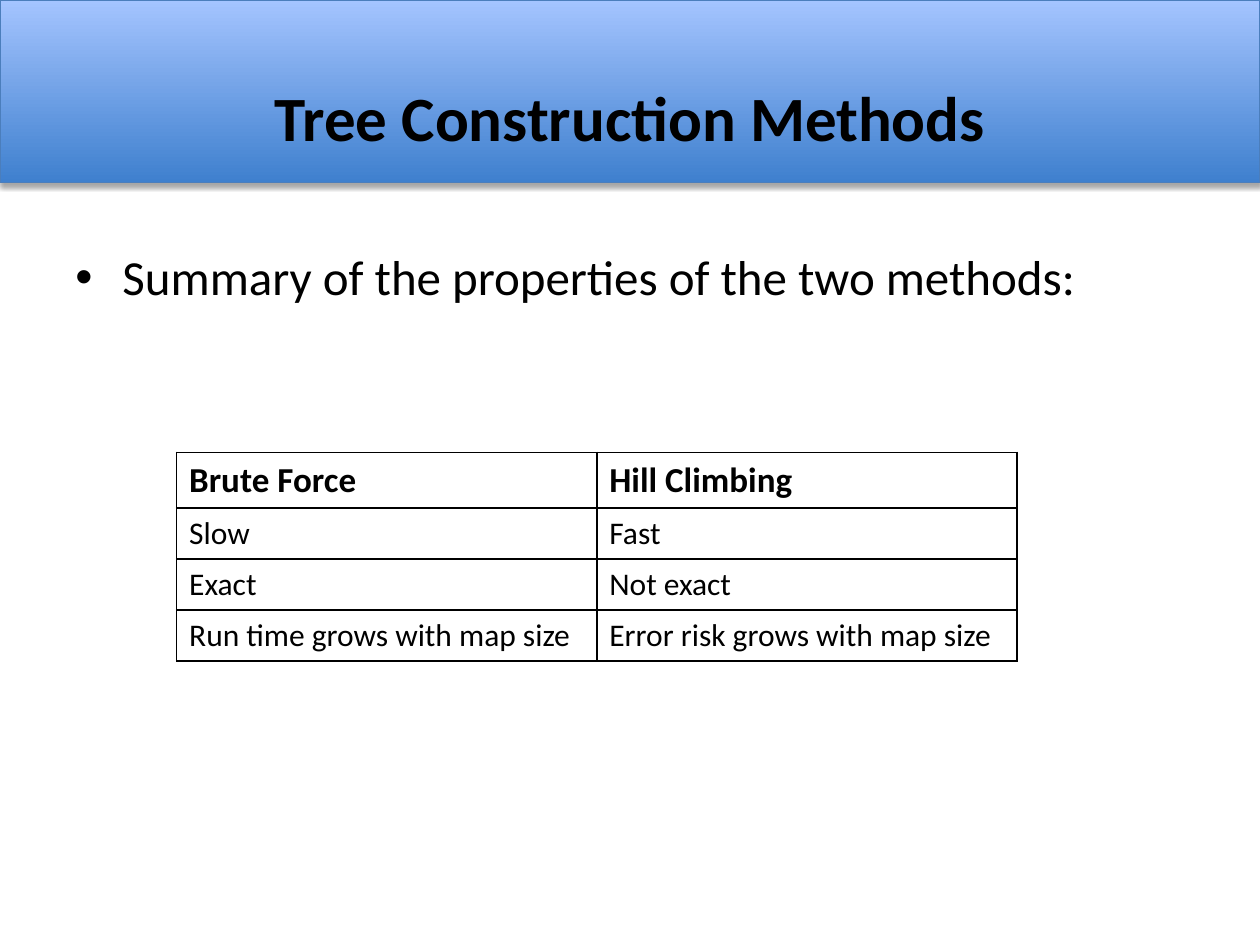
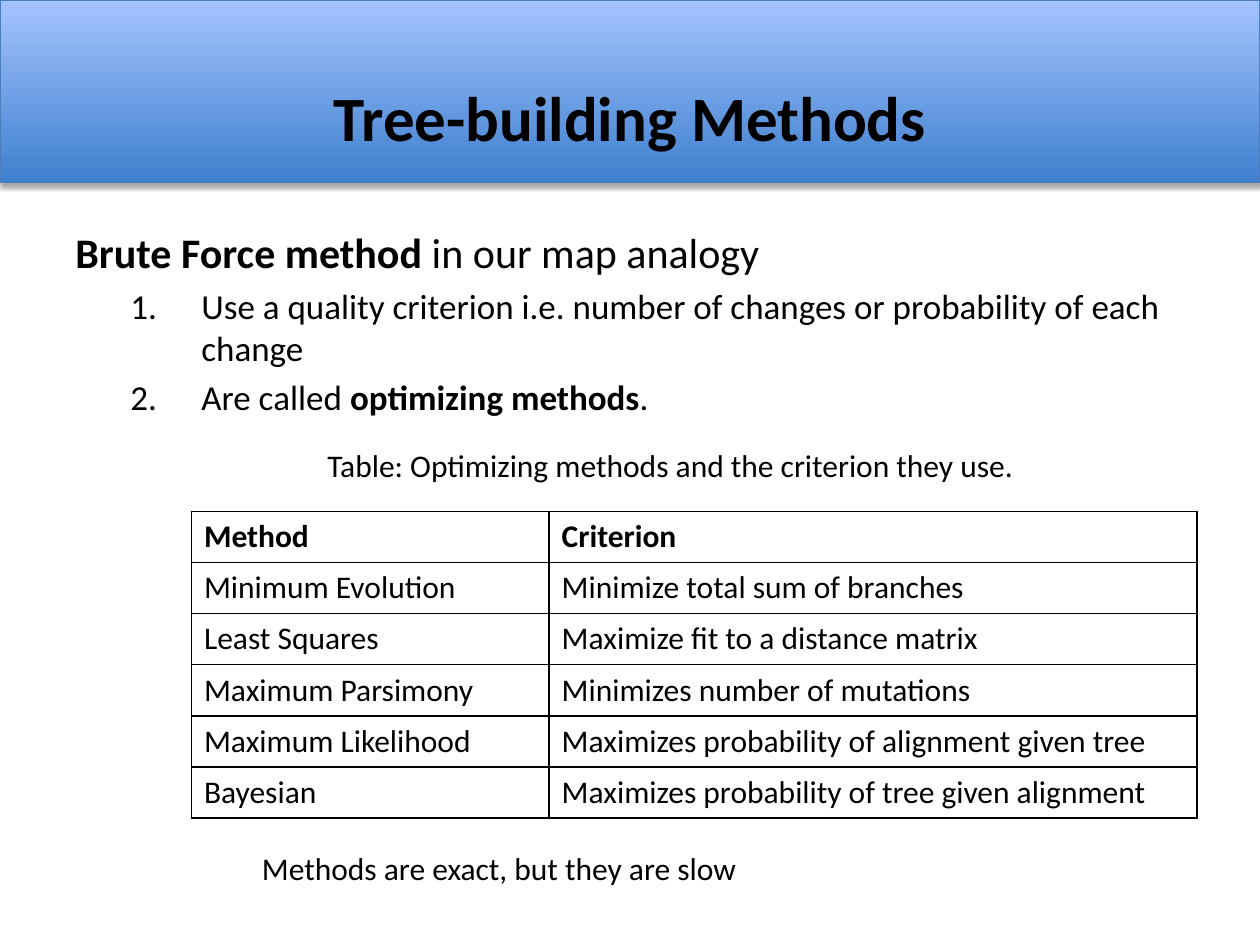
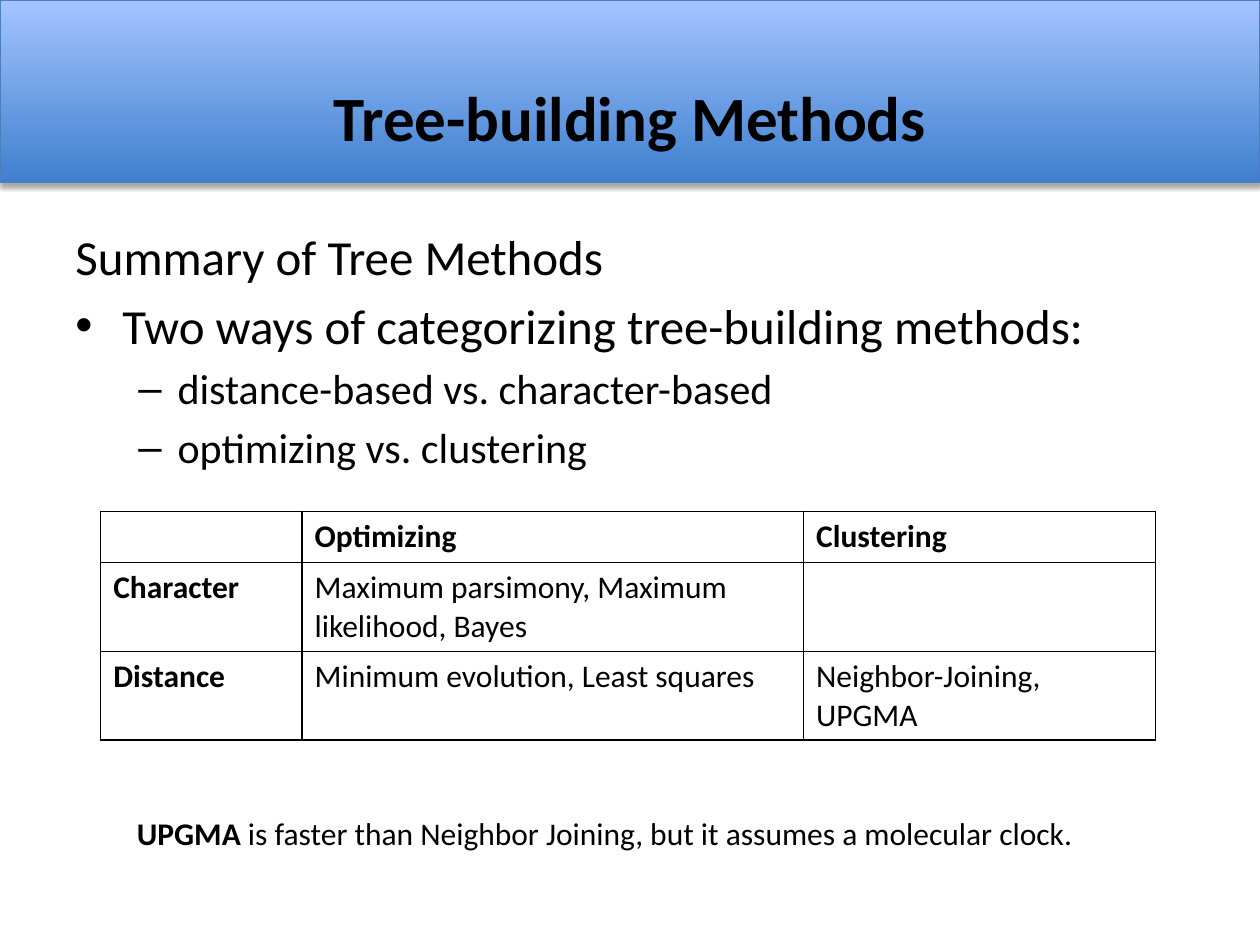
from lxml import etree
from pptx import Presentation
from pptx.dml.color import RGBColor
from pptx.enum.shapes import MSO_SHAPE
from pptx.enum.text import MSO_ANCHOR, MSO_AUTO_SIZE, PP_ALIGN
from pptx.oxml.ns import qn
from pptx.util import Cm, Pt

RECTANGLE = MSO_SHAPE.RECTANGLE
TOP, MIDDLE = MSO_ANCHOR.TOP, MSO_ANCHOR.MIDDLE
CENTER = PP_ALIGN.CENTER
GROW, FIXED = MSO_AUTO_SIZE.SHAPE_TO_FIT_TEXT, MSO_AUTO_SIZE.NONE

FONT = "Calibri"
BLACK = "000000"
BAND_BOTTOM, BAND_TOP, BAND_LINE = "3F80CE", "A4C4FF", "4B7EBC"

SLIDE_WIDTH, SLIDE_HEIGHT = 25.4, 19.05
BAND_HEIGHT = 3.68
TITLE_BOX = (1.27, 0.76, 22.86, 3.18)
ROW_HEIGHT, TWO_LINE_ROW = 1.03, 1.79

# Paragraph formats of the body text: left margin and hanging indent in cm
BULLET = {"bullet": "•", "margin": 0.95, "hanging": 0.95}
DASH = {"bullet": "–", "margin": 2.06, "hanging": 0.79, "level": 1}
NUMBER = {"bullet": "1.", "margin": 2.54, "hanging": 1.43, "level": 1}


def color(value):
    return RGBColor.from_string(value)


def add_element(parent, tag, **attributes):
    element = etree.SubElement(parent, qn(tag))
    for name, value in attributes.items():
        element.set(name, str(value))
    return element


def set_bullet(paragraph, bullet, margin, hanging):
    properties = paragraph._p.get_or_add_pPr()
    properties.set("marL", str(Cm(margin)))
    properties.set("indent", str(-Cm(hanging)))
    if bullet == "1.":
        add_element(properties, "a:buFont", typeface="+mj-lt")
        add_element(properties, "a:buAutoNum", type="arabicPeriod")
    else:
        add_element(properties, "a:buFont", typeface="Arial")
        add_element(properties, "a:buChar", char=bullet)


def write(frame, text, *, size=18, bold=False, align=None, spacing=0,
          bullet=None, margin=0, hanging=0, level=0):
    """Add one paragraph; ** switches bold, spacing is a share of the size."""
    paragraph = frame.paragraphs[0]
    if paragraph.runs:
        paragraph = frame.add_paragraph()
    paragraph.level = level
    paragraph.alignment = align
    paragraph.space_before = Pt(size * spacing)
    if bullet:
        set_bullet(paragraph, bullet, margin, hanging)
    for index, part in enumerate(text.split("**")):
        if part:
            run = paragraph.add_run()
            run.text = part
            run.font.name = FONT
            run.font.size = Pt(size)
            run.font.bold = bold or index % 2 == 1
            run.font.color.rgb = color(BLACK)


def add_text_frame(slide, box, anchor=TOP, wrap=True, auto_size=FIXED):
    frame = slide.shapes.add_textbox(*map(Cm, box)).text_frame
    frame.word_wrap = wrap
    frame.auto_size = auto_size
    frame.vertical_anchor = anchor
    return frame


def add_band(slide):
    band = slide.shapes.add_shape(RECTANGLE, 0, 0, Cm(SLIDE_WIDTH), Cm(BAND_HEIGHT))
    band.fill.gradient()
    band.fill.gradient_angle = 90
    for stop, value in zip(band.fill.gradient_stops, (BAND_BOTTOM, BAND_TOP)):
        stop.color.rgb = color(value)
    band.line.color.rgb = color(BAND_LINE)
    band.line.width = Pt(0.75)
    band.shadow.inherit = False
    effects = band._element.spPr.find(qn("a:effectLst"))
    shadow = add_element(effects, "a:outerShdw", blurRad=Pt(3.1), dist=Pt(1.8),
                         dir=90 * 60000, rotWithShape=0)
    shade = add_element(shadow, "a:srgbClr", val=BLACK)
    add_element(shade, "a:alpha", val=35000)


def add_titled_slide(presentation, title):
    slide = presentation.slides.add_slide(presentation.slide_layouts[6])
    add_band(slide)
    write(add_text_frame(slide, TITLE_BOX, anchor=MIDDLE), title,
          size=36, bold=True, align=CENTER)
    return slide


def add_body(slide, top, height, paragraphs):
    frame = add_text_frame(slide, (1.27, top, 22.86, height))
    for text, size, style in paragraphs:
        write(frame, text, size=size, spacing=0.2, **style)


def add_note(slide, box, text, wrap=False):
    write(add_text_frame(slide, box, wrap=wrap, auto_size=GROW), text)


def set_borders(cell):
    properties = cell._tc.get_or_add_tcPr()
    for side in ("a:lnL", "a:lnR", "a:lnT", "a:lnB"):
        line = add_element(properties, side, w=Pt(1))
        add_element(add_element(line, "a:solidFill"), "a:srgbClr", val=BLACK)


def add_grid(slide, left, top, widths, heights, rows, header_size=18):
    """Add a ruled table whose first row is bold."""
    frame = slide.shapes.add_table(len(rows), len(widths), Cm(left), Cm(top),
                                   Cm(sum(widths)), Cm(sum(heights)))
    table = frame.table
    table.first_row = table.horz_banding = False
    for column, width in zip(table.columns, widths):
        column.width = Cm(width)
    for row_index, (row, height) in enumerate(zip(rows, heights)):
        table.rows[row_index].height = Cm(height)
        header = row_index == 0
        for column_index, text in enumerate(row):
            cell = table.cell(row_index, column_index)
            set_borders(cell)
            cell.fill.background()
            write(cell.text_frame, text, size=header_size if header else 18, bold=header)


def add_construction_slide(presentation):
    slide = add_titled_slide(presentation, "Tree Construction Methods")
    add_body(slide, 4.85, 1.93, [
        ("Summary of the properties of the two methods:", 28, BULLET),
    ])
    rows = [
        ("Brute Force", "Hill Climbing"),
        ("Slow", "Fast"),
        ("Exact", "Not exact"),
        ("Run time grows with map size", "Error risk grows with map size"),
    ]
    add_grid(slide, 3.56, 9.12, [8.47] * 2, [ROW_HEIGHT] * len(rows), rows, header_size=20)


def add_optimizing_slide(presentation):
    slide = add_titled_slide(presentation, "Tree-building Methods")
    add_body(slide, 4.45, 4.42, [
        ("**Brute Force method** in our map analogy", 24, {}),
        ("Use a quality criterion i.e. number of changes or probability of each change",
         20, NUMBER),
        ("Are called **optimizing methods**.", 20, NUMBER),
    ])
    add_note(slide, (6.35, 8.86, 14.55, 1.02),
             "Table: Optimizing methods and the criterion they use.")
    rows = [
        ("Method", "Criterion"),
        ("Minimum Evolution", "Minimize total sum of branches"),
        ("Least Squares", "Maximize fit to a distance matrix"),
        ("Maximum Parsimony", "Minimizes number of mutations"),
        ("Maximum Likelihood", "Maximizes probability of alignment given tree"),
        ("Bayesian", "Maximizes probability of tree given alignment"),
    ]
    add_grid(slide, 3.86, 10.31, [7.21, 13.06], [ROW_HEIGHT] * len(rows), rows)
    add_note(slide, (5.03, 16.99, 10.21, 1.02), "Methods are exact, but they are slow")


def add_summary_slide(presentation):
    slide = add_titled_slide(presentation, "Tree-building Methods")
    add_body(slide, 4.45, 5.87, [
        ("Summary of Tree Methods", 28, {}),
        ("Two ways of categorizing tree-building methods:", 28, BULLET),
        ("distance-based vs. character-based", 24, DASH),
        ("optimizing vs. clustering", 24, DASH),
    ])
    rows = [
        ("", "Optimizing", "Clustering"),
        ("**Character**", "Maximum parsimony, Maximum likelihood, Bayes", ""),
        ("**Distance**", "Minimum evolution, Least squares", "Neighbor-Joining, UPGMA"),
    ]
    add_grid(slide, 2.03, 10.31, [4.06, 10.11, 7.09],
             [ROW_HEIGHT, TWO_LINE_ROW, TWO_LINE_ROW], rows)
    add_note(slide, (2.51, 16.28, 20.47, 1.02),
             "**UPGMA** is faster than Neighbor Joining, but it assumes a molecular clock.",
             wrap=True)


def main():
    presentation = Presentation()
    presentation.slide_width = Cm(SLIDE_WIDTH)
    presentation.slide_height = Cm(SLIDE_HEIGHT)
    add_construction_slide(presentation)
    add_optimizing_slide(presentation)
    add_summary_slide(presentation)
    presentation.save("out.pptx")


if __name__ == "__main__":
    main()
